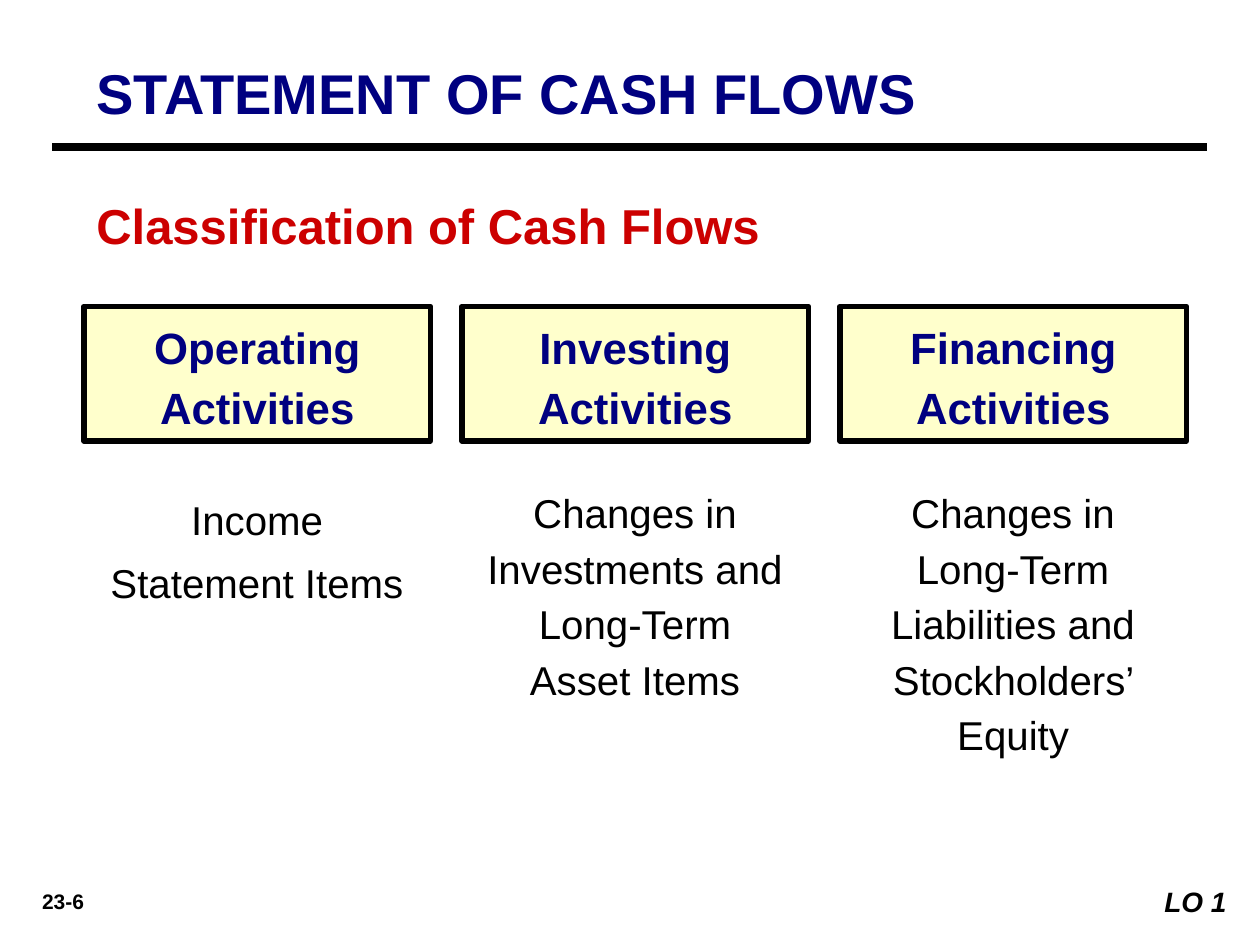
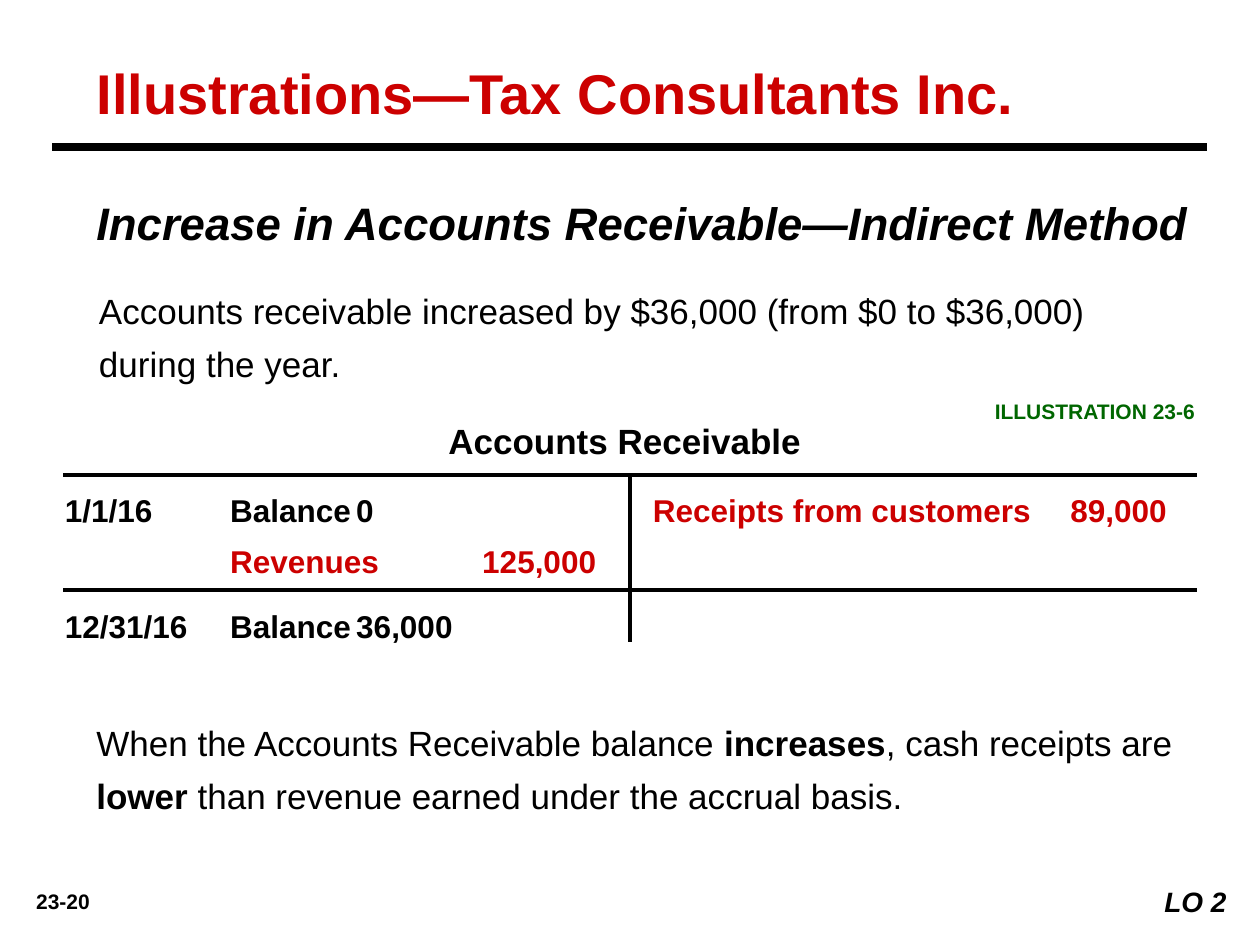
"""Build two cash flow statement slides: activity classes and a T-account."""
from pptx import Presentation
from pptx import util as u
from pptx.dml.color import RGBColor
from pptx.enum import shapes, text
from pptx.oxml.ns import qn

FONT = "Arial"
BLACK, WHITE, NAVY, RED, GREEN, CREAM = (
    "000000", "FFFFFF", "000080", "CC0000", "006600", "FFFFCC")
LEFT, CENTER, RIGHT = text.PP_ALIGN.LEFT, text.PP_ALIGN.CENTER, text.PP_ALIGN.RIGHT

ACTIVITIES = [
    ("Operating Activities", "Income Statement Items", 1.3, 198),
    ("Investing Activities", "Changes in Investments and Long-Term Asset Items", 1.15, 186),
    ("Financing Activities",
     "Changes in Long-Term Liabilities and Stockholders’ Equity", 1.15, 186),
]
ENTRIES = [
    ("1/1/16\tBalance\t0", 30, 277, BLACK),
    ("\tRevenues\t125,000", 30, 306, RED),
    ("Receipts from customers\t89,000", 366, 277, RED),
    ("12/31/16\tBalance\t36,000", 30, 343.5, BLACK),
]
ACCOUNT_RULES = [(36, 271.5, 684, 271.5), (360, 271.5, 360, 367), (36, 337, 684, 337)]
INCREASE = ("Accounts receivable increased by $36,000 (from $0 to $36,000) "
            "during the year.")
CONCLUSION = [
    ("When the Accounts Receivable balance ", False), ("increases", True),
    (", cash receipts are ", False), ("lower", True),
    (" than revenue earned under the accrual basis.", False),
]


def rgb(color):
    return RGBColor.from_string(color)


def place(sp, box):
    sp.left, sp.top, sp.width, sp.height = [u.Pt(v) for v in box]


def write(sp, runs, size, color=BLACK, bold=False, italic=False, align=LEFT, spacing=None):
    """Fill a shape with one paragraph; runs is a string or (text, bold) pairs."""
    tf = sp.text_frame
    tf.word_wrap = True
    tf.auto_size = text.MSO_AUTO_SIZE.NONE
    tf.vertical_anchor = text.MSO_ANCHOR.TOP
    p = tf.paragraphs[0]
    p.alignment = align
    if spacing:
        p.line_spacing = spacing
    for content, strong in [(runs, bold)] if isinstance(runs, str) else runs:
        r = p.add_run()
        r.text = content
        f = r.font
        f.name, f.size, f.bold, f.italic = FONT, u.Pt(size), strong, italic
        f.color.rgb = rgb(color)
    return p


def add_text(s, box, runs, size, **style):
    sp = s.shapes.add_textbox(*[u.Pt(v) for v in box])
    return write(sp, runs, size, **style)


def add_box(s, box, fill, line=None):
    sp = s.shapes.add_shape(shapes.MSO_SHAPE.RECTANGLE, *[u.Pt(v) for v in box])
    sp.shadow.inherit = False
    sp.fill.solid()
    sp.fill.fore_color.rgb = rgb(fill)
    if line:
        sp.line.color.rgb = rgb(line)
        sp.line.width = u.Pt(3)
    else:
        sp.line.fill.background()
    return sp


def add_rule(s, ends, width):
    c = s.shapes.add_connector(shapes.MSO_CONNECTOR.STRAIGHT, *[u.Pt(v) for v in ends])
    c.line.color.rgb = rgb(BLACK)
    c.line.width = u.Pt(width)
    sp_pr = c._element.spPr
    sp_pr.append(sp_pr.makeelement(qn("a:effectLst"), {}))


def add_slide(prs, title, color, page, objective):
    """Add a slide with its title, rule and footers."""
    s = prs.slides.add_slide(prs.slide_layouts[5])
    place(s.shapes.title, (48, 30, 642, 46))
    write(s.shapes.title, title, 32, color=color, bold=True)
    add_rule(s, (30, 84, 690, 84), 4.5)
    add_text(s, (6, 504, 60, 21.5), page, 12, bold=True, align=CENTER)
    sp = add_box(s, (642, 502, 66, 26.5), WHITE)
    write(sp, objective, 16, bold=True, italic=True, align=RIGHT)
    return s


def add_classification(prs):
    s = add_slide(prs, "STATEMENT OF CASH FLOWS", NAVY, "23-6", "LO 1")
    add_text(s, (48, 108, 630, 41), "Classification of Cash Flows", 28, color=RED, bold=True)
    width, pitch = 198, 216
    for i, (activity, items, spacing, items_width) in enumerate(ACTIVITIES):
        x = 48 + i * pitch
        sp = add_box(s, (x, 175, width, 77), CREAM, BLACK)
        write(sp, activity, 25, color=NAVY, bold=True, align=CENTER, spacing=1.15)
        add_text(s, (x + (width - items_width) / 2, 271.5, items_width, 166),
                 items, 23, align=CENTER, spacing=spacing)


def add_receivable(prs):
    s = add_slide(prs, "Illustrations—Tax Consultants Inc.", RED, "23-20", "LO 2")
    add_text(s, (48, 108, 642, 39), "Increase in Accounts Receivable—Indirect Method",
             26, bold=True, italic=True)
    add_text(s, (49.5, 156, 634, 65), INCREASE, 20, spacing=1.25)
    add_text(s, (528, 224, 162, 24), "ILLUSTRATION 23-6", 12,
             color=GREEN, bold=True, align=RIGHT)
    add_text(s, (192, 236, 330, 31), "Accounts Receivable", 20, bold=True, align=CENTER)
    for ends in ACCOUNT_RULES:
        add_rule(s, ends, 2.25)
    indent = u.Pt(94.5)
    for entry, x, y, color in ENTRIES:
        p = add_text(s, (x, y, 330, 29), entry, 18, color=color, bold=True)
        p_pr = p._p.get_or_add_pPr()
        p_pr.set("marL", str(indent))
        p_pr.set("indent", str(-indent))
        p_pr.set("defTabSz", str(u.Pt(72)))
    add_text(s, (48, 403, 642, 65.5), CONCLUSION, 20, spacing=1.25)


def main():
    prs = Presentation()
    prs.slide_width, prs.slide_height = u.Pt(720), u.Pt(540)
    add_classification(prs)
    add_receivable(prs)
    prs.save("out.pptx")


if __name__ == "__main__":
    main()
